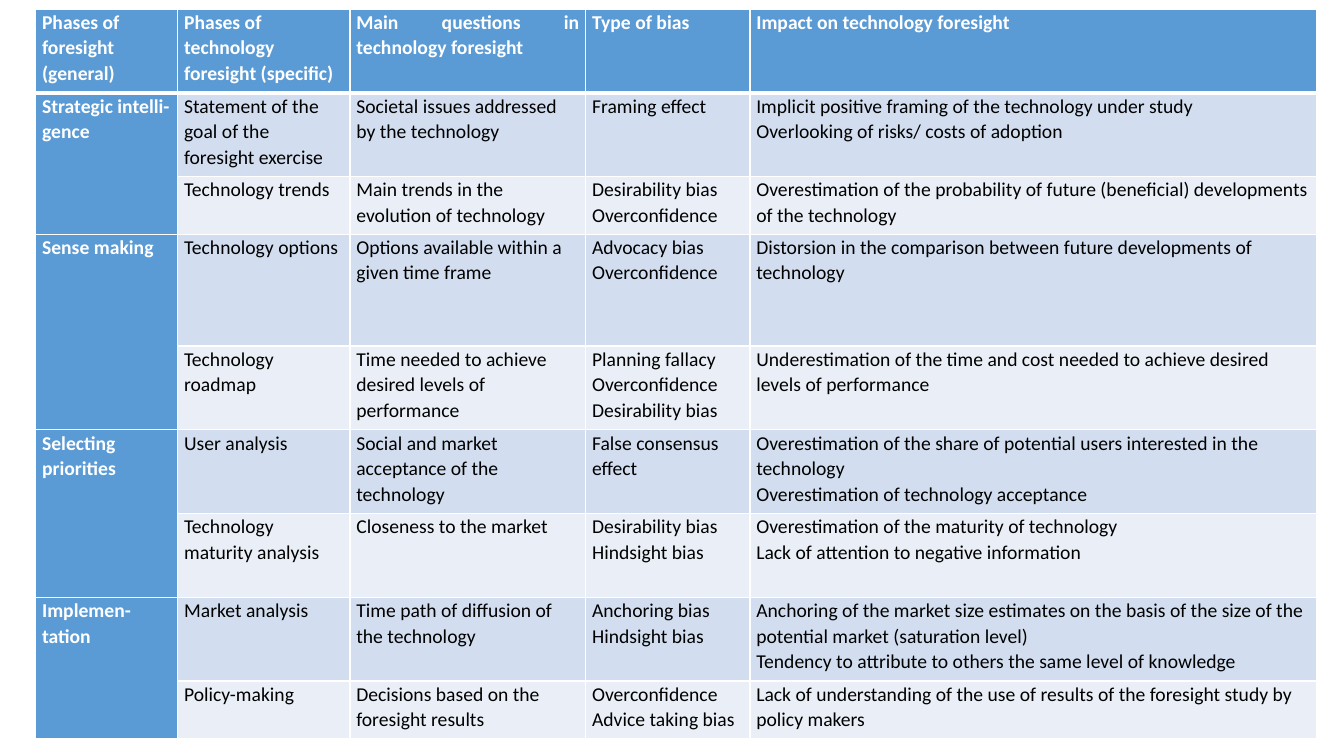
from dataclasses import dataclass

from lxml.etree import SubElement
from pptx import Presentation
from pptx.dml.color import RGBColor as Rgb
from pptx.enum.text import PP_ALIGN as Align
from pptx.oxml.ns import qn
from pptx.util import Cm, Pt


@dataclass(frozen=True)
class Theme:
    font: str = "Calibri"
    size: int = 14
    lead: float = 1.07
    inset: float = 0.16
    thin: int = 1
    thick: int = 3
    white: str = "FFFFFF"
    black: str = "000000"
    blue: str = "5B9BD5"
    bands: tuple = ("D2DEEF", "EAEFF7")


HEADS = [
    "Phases of foresight (general)",
    "Phases of technology foresight (specific)",
    "Main questions in technology foresight",
    "Type of bias",
    "Impact on technology foresight",
]
PHASES = ["Strategic intelli-\ngence", "Sense making", "Selecting priorities", "Implemen-\ntation"]
STEPS = [
    ("Statement of the goal of the foresight exercise",
     "Societal issues addressed by the technology",
     "Framing effect",
     "Implicit positive framing of the technology under study\n"
     "Overlooking of risks/ costs of adoption"),
    ("Technology trends",
     "Main trends in the evolution of technology",
     "Desirability bias\nOverconfidence",
     "Overestimation of the probability of future (beneficial) developments of the technology"),
    ("Technology options",
     "Options available within a given time frame",
     "Advocacy bias\nOverconfidence",
     "Distorsion in the comparison between future developments of technology"),
    ("Technology roadmap",
     "Time needed to achieve desired levels of performance",
     "Planning fallacy\nOverconfidence\nDesirability bias",
     "Underestimation of the time and cost needed to achieve desired levels of performance"),
    ("User analysis",
     "Social and market acceptance of the technology",
     "False consensus effect",
     "Overestimation of the share of potential users interested in the technology\n"
     "Overestimation of technology acceptance"),
    ("Technology maturity analysis",
     "Closeness to the market",
     "Desirability bias\nHindsight bias",
     "Overestimation of the maturity of technology\n"
     "Lack of attention to negative information"),
    ("Market analysis",
     "Time path of diffusion of the technology",
     "Anchoring bias\nHindsight bias",
     "Anchoring of the market size estimates on the basis of the size of the potential market "
     "(saturation level)\n"
     "Tendency to attribute to others the same level of knowledge"),
    ("Policy-making",
     "Decisions based on the foresight results",
     "Overconfidence\nAdvice taking bias",
     "Lack of understanding of the use of results of the foresight study by policy makers"),
]
WIDTHS = [3.58, 4.34, 5.94, 4.14, 14.27]
HEIGHTS = [2.11, 2.11, 1.45, 2.82, 2.11, 2.11, 2.11, 2.11, 1.45]
JUST = {2, 4}


class Board:
    def __init__(self, slide, theme):
        self.slide = slide
        self.theme = theme

    def grid(self, left, top, widths, heights):
        frame = self.slide.shapes.add_table(
            len(heights), len(widths), Cm(left), Cm(top), Cm(sum(widths)), Cm(sum(heights)))
        table = frame.table
        for col, width in zip(table.columns, widths):
            col.width = Cm(width)
        for row, height in zip(table.rows, heights):
            row.height = Cm(height)
        return table

    def edge(self, cell, top, base):
        thin = self.theme.thin
        props = cell._tc.get_or_add_tcPr()
        for side, width in (("L", thin), ("R", thin), ("T", top), ("B", base)):
            line = SubElement(props, qn(f"a:ln{side}"), w=str(Pt(width)))
            fill = SubElement(line, qn("a:solidFill"))
            SubElement(fill, qn("a:srgbClr"), val=self.theme.white)

    def paint(self, cell, row, head):
        theme = self.theme
        self.edge(cell, theme.thick if row == 1 else theme.thin,
                  theme.thick if row == 0 else theme.thin)
        cell.fill.solid()
        color = theme.blue if head else theme.bands[(row - 1) % 2]
        cell.fill.fore_color.rgb = Rgb.from_string(color)
        cell.margin_left = cell.margin_right = Cm(theme.inset)
        cell.margin_top = cell.margin_bottom = 0

    def label(self, cell, text, head, just):
        theme = self.theme
        cell.text = text
        for para in cell.text_frame.paragraphs:
            para.alignment = Align.JUSTIFY if just else Align.LEFT
            para.line_spacing = theme.lead
            font = para.font
            font.name = theme.font
            font.size = Pt(theme.size)
            font.bold = head
            font.color.rgb = Rgb.from_string(theme.white if head else theme.black)

    def fill(self, table, rows):
        for r, texts in enumerate(rows):
            for c, text in enumerate(texts):
                cell = table.cell(r, c)
                head = r == 0 or c == 0
                self.paint(cell, r, head)
                if text:
                    just = c in JUST if r == 0 else c == 0
                    self.label(cell, text, head, just)


def main():
    deck = Presentation()
    deck.slide_width, deck.slide_height = Cm(33.87), Cm(19.05)
    board = Board(deck.slides.add_slide(deck.slide_layouts[6]), Theme())
    table = board.grid(0.9, 0.23, WIDTHS, HEIGHTS)
    rows = [HEADS]
    for i, step in enumerate(STEPS):
        rows.append(("" if i % 2 else PHASES[i // 2], *step))
    board.fill(table, rows)
    for r in range(1, len(rows), 2):
        table.cell(r, 0).merge(table.cell(r + 1, 0))
    deck.save("out.pptx")


if __name__ == "__main__":
    main()
